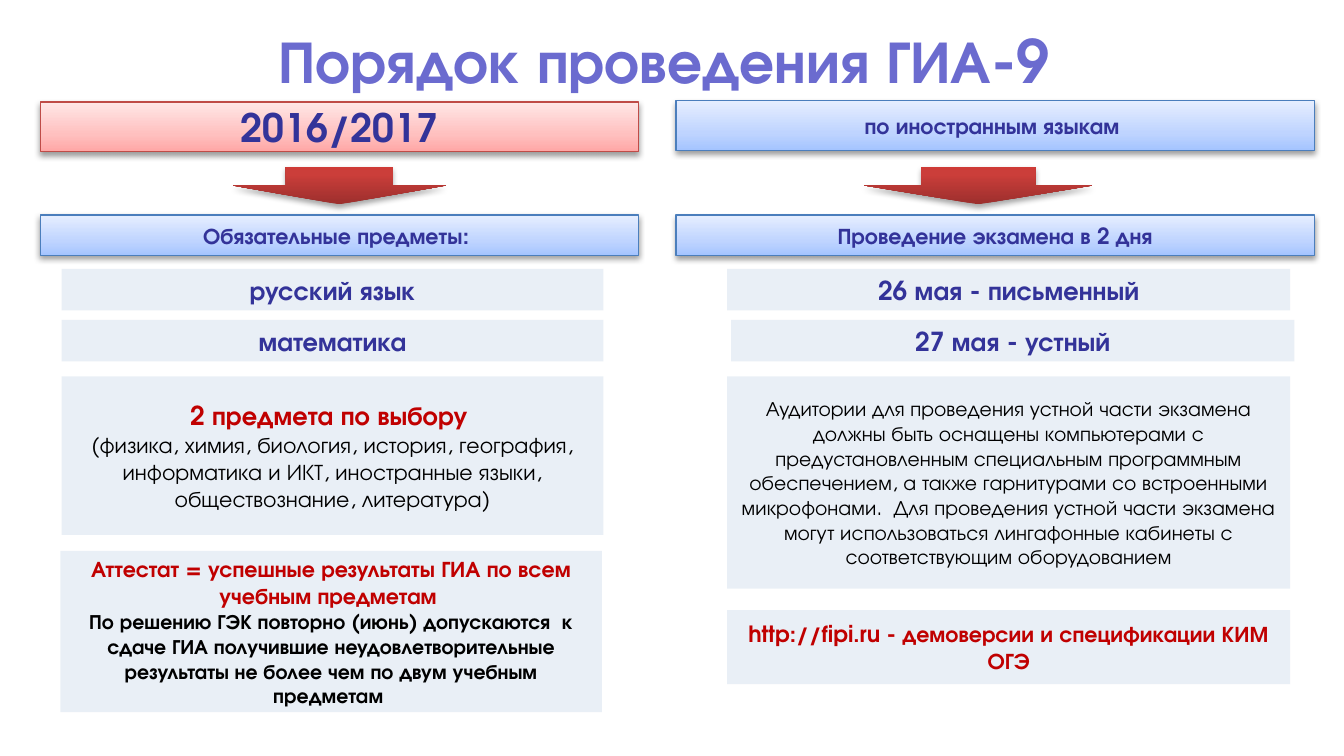
import pptx
import pptx.util
import pptx.dml.color
import pptx.enum.shapes
import pptx.enum.text
import pptx.oxml
import pptx.oxml.ns
import lxml.etree

Inches = pptx.util.Inches
Shapes = pptx.enum.shapes.MSO_SHAPE

THEME = {
    "font": "TeX Gyre Adventor",
    "title": "6B6BCF", "heading": "333399", "accent": "C00000", "body": "000000",
    "panel": "B9CDE5", "panel_opacity": 31,
    "size": {"title": 32, "year": 21, "large": 14, "medium": 12, "small": 11},
    "blue": {"stops": [(0, "A4C4FF"), (35, "BFD4FF"), (100, "E6EEFF")],
             "line": "4B7EBC", "shadow": (38, 1.6)},
    "pink": {"stops": [(0, "FFA6A5"), (35, "FFC0BF"), (100, "FFE7E7")],
             "line": "BF4C48", "shadow": (38, 1.6)},
    "red": {"stops": [(0, "9C2F2D"), (80, "CB3E3A"), (100, "CE3B37")],
            "line": None, "shadow": (35, 1.8)},
}

TITLE = "Порядок проведения ГИА-9"

COLUMNS = [
    {
        "left": 0.3, "width": 4.45, "panel_left": 0.46, "panel_width": 4.03,
        "arrow": (1.73, 1.59),
        "banners": [
            (0.76, 0.37, "pink", "2016/2017", "year"),
            (1.6, 0.3, "blue", "Обязательные предметы: ", "medium"),
        ],
        "panels": [
            (0, 2, 0.31, [("русский язык", "large", "heading", True)]),
            (0, 2.38, 0.31, [("математика", "large", "heading", True)]),
            (0, 2.8, 1.18, [
                ("2 предмета по выбору ", "large", "accent", True),
                ("(физика, химия, биология, история, география, информатика и ИКТ, "
                 "иностранные языки, обществознание, литература)", "medium", "body", False),
            ]),
            (-0.01, 4.1, 1.2, [
                ("Аттестат = успешные результаты ГИА по всем учебным предметам ",
                 "medium", "accent", True),
                ("По решению ГЭК повторно (июнь) допускаются  к сдаче ГИА получившие "
                 "неудовлетворительные результаты не более чем по двум учебным предметам ",
                 "small", "body", True),
            ]),
        ],
    },
    {
        "left": 5.03, "width": 4.75, "panel_left": 5.41, "panel_width": 4.19,
        "arrow": (6.43, 1.7),
        "banners": [
            (0.75, 0.37, "blue", "по иностранным языкам ", "medium"),
            (1.6, 0.3, "blue", "Проведение экзамена в 2 дня", "medium"),
        ],
        "panels": [
            (0, 2, 0.31, [("26 мая - письменный", "large", "heading", True)]),
            (0.03, 2.38, 0.31, [("27 мая - устный", "large", "heading", True)]),
            (0, 2.8, 1.58, [
                ("Аудитории для проведения устной части экзамена должны быть оснащены "
                 "компьютерами с предустановленным специальным программным обеспечением, "
                 "а также гарнитурами со встроенными микрофонами.  Для проведения устной "
                 "части экзамена могут использоваться лингафонные кабинеты с "
                 "соответствующим оборудованием", "small", "body", False),
            ]),
            (0, 4.54, 0.55, [
                ("http://fipi.ru - демоверсии и спецификации КИМ ОГЭ",
                 "medium", "accent", True),
            ]),
        ],
    },
]
ARROW_TOP, ARROW_HEIGHT = 1.24, 0.28


def rgb(value):
    return pptx.dml.color.RGBColor.from_string(value)


def add_child(parent, tag, **attributes):
    return lxml.etree.SubElement(parent, pptx.oxml.ns.qn(tag), **attributes)


def add_color(parent, value, opacity=100):
    color = add_child(parent, "a:srgbClr", val=value)
    if opacity < 100:
        add_child(color, "a:alpha", val=str(opacity * 1000))


def write(shape, paragraphs):
    frame = shape.text_frame
    frame.word_wrap = True
    frame.vertical_anchor = pptx.enum.text.MSO_ANCHOR.MIDDLE
    frame.text = "\n".join(text for text, *_ in paragraphs)
    for paragraph, (_, size, color, bold) in zip(frame.paragraphs, paragraphs):
        paragraph.alignment = pptx.enum.text.PP_ALIGN.CENTER
        font = paragraph.runs[0].font
        font.name = THEME["font"]
        font.size = pptx.util.Pt(THEME["size"][size])
        font.color.rgb = rgb(THEME[color])
        font.bold = bold


def add_box(slide, kind, left, top, width, height):
    shape = slide.shapes.add_shape(
        kind, Inches(left), Inches(top), Inches(width), Inches(height))
    shape.shadow.inherit = False
    shape.line.fill.background()
    return shape


def apply_gloss(shape, style):
    shape.fill.gradient()
    shape.fill.gradient_angle = 90
    properties = shape.element.spPr
    stops = properties.find(".//" + pptx.oxml.ns.qn("a:gsLst"))
    for stop in list(stops):
        stops.remove(stop)
    for position, color in style["stops"]:
        add_color(add_child(stops, "a:gs", pos=str(position * 1000)), color)
    if style["line"]:
        shape.line.color.rgb = rgb(style["line"])
        shape.line.width = pptx.util.Pt(0.75)
    opacity, distance = style["shadow"]
    shadow = add_child(
        properties.find(pptx.oxml.ns.qn("a:effectLst")), "a:outerShdw",
        blurRad=str(pptx.util.Pt(3.1)), dist=str(pptx.util.Pt(distance)),
        dir="5400000", rotWithShape="0")
    add_color(shadow, "000000", opacity)


def add_panel(slide, left, top, width, height, paragraphs):
    panel = add_box(slide, Shapes.RECTANGLE, left, top, width, height)
    panel.fill.solid()
    panel.fill.fore_color.rgb = rgb(THEME["panel"])
    color = panel.element.spPr.find(
        pptx.oxml.ns.qn("a:solidFill") + "/" + pptx.oxml.ns.qn("a:srgbClr"))
    add_child(color, "a:alpha", val=str(THEME["panel_opacity"] * 1000))
    write(panel, paragraphs)


def add_column(slide, column):
    for top, height, style, text, size in column["banners"]:
        banner = add_box(slide, Shapes.RECTANGLE, column["left"], top, column["width"], height)
        apply_gloss(banner, THEME[style])
        write(banner, [(text, size, "heading", True)])
    arrow_left, arrow_width = column["arrow"]
    arrow = add_box(slide, Shapes.DOWN_ARROW, arrow_left, ARROW_TOP, arrow_width, ARROW_HEIGHT)
    apply_gloss(arrow, THEME["red"])
    for shift, top, height, paragraphs in column["panels"]:
        add_panel(slide, column["panel_left"] + shift, top,
                  column["panel_width"], height, paragraphs)


def main():
    presentation = pptx.Presentation()
    presentation.slide_width = Inches(10)
    presentation.slide_height = Inches(10) * 9 // 16
    slide = presentation.slides.add_slide(presentation.slide_layouts[5])
    title = slide.shapes.title
    title.left, title.top = Inches(0.14), Inches(0.12)
    title.width, title.height = Inches(9.61), Inches(0.64)
    write(title, [(TITLE, "title", "title", True)])
    for column in COLUMNS:
        add_column(slide, column)
    presentation.save("out.pptx")


if __name__ == "__main__":
    main()
